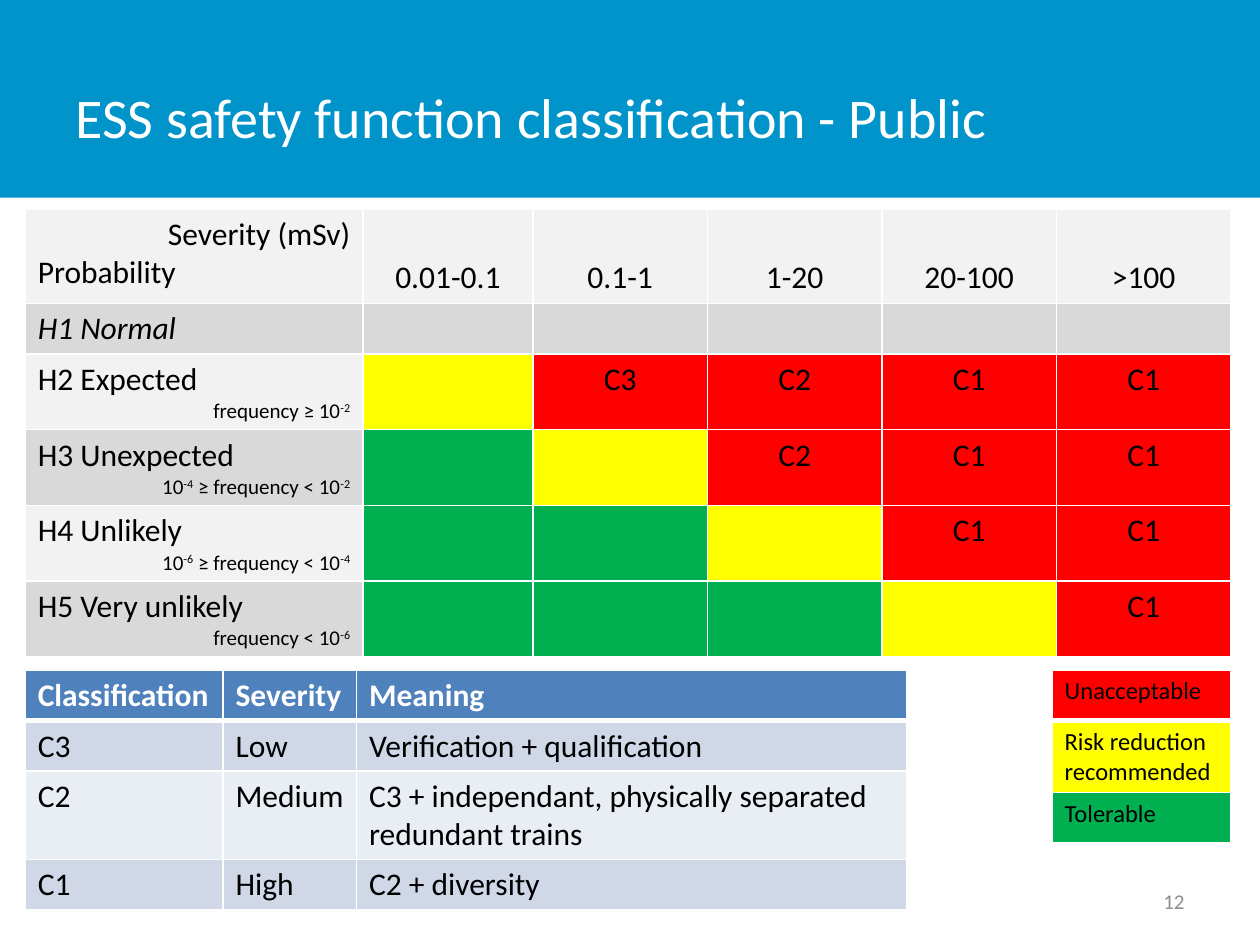
from lxml import etree
from pptx import Presentation
from pptx.dml.color import RGBColor
from pptx.enum import shapes, text
from pptx.oxml.ns import qn
from pptx.util import Inches, Pt

BLACK = RGBColor(0x00, 0x00, 0x00)
WHITE = RGBColor(0xFF, 0xFF, 0xFF)
GRAY = RGBColor(0x8C, 0x8C, 0x8C)
BAND_BLUE = RGBColor(0x00, 0x94, 0xCA)
HEADER_BLUE = RGBColor(0x4F, 0x81, 0xBD)
STRIPES_GRAY = [RGBColor(0xF2, 0xF2, 0xF2), RGBColor(0xD9, 0xD9, 0xD9)]
STRIPES_BLUE = [RGBColor(0xE9, 0xED, 0xF4), RGBColor(0xD0, 0xD8, 0xE8)]
RED = RGBColor(0xFF, 0x00, 0x00)
YELLOW = RGBColor(0xFF, 0xFF, 0x00)
GREEN = RGBColor(0x00, 0xB0, 0x50)
LEFT, CENTER, RIGHT = text.PP_ALIGN.LEFT, text.PP_ALIGN.CENTER, text.PP_ALIGN.RIGHT


def write(paragraph, content, size=18, color=BLACK, align=LEFT, bold=False, italic=False):
    """Fill a paragraph; every second part between ^ marks is superscript."""
    paragraph.alignment = align
    for index, part in enumerate(content.split("^")):
        if not part:
            continue
        run = paragraph.add_run()
        run.text = part
        run.font.name = "Calibri"
        run.font.size = Pt(size)
        run.font.color.rgb = color
        run.font.bold = bold
        run.font.italic = italic
        if index % 2:
            run.font._element.set("baseline", "30000")


def add_grid(left, top, widths, heights, fills, header_rule=1):
    """Add a table with white borders and one fill per cell."""
    grid = slide.shapes.add_table(len(heights), len(widths), Inches(left), Inches(top),
                                  Inches(sum(widths)), Inches(sum(heights))).table
    for column, width in zip(grid.columns, widths):
        column.width = Inches(width)
    for r, height in enumerate(heights):
        grid.rows[r].height = Inches(height)
        for c in range(len(widths)):
            cell = grid.cell(r, c)
            properties = cell._tc.get_or_add_tcPr()
            for side in "LRTB":
                at_header_rule = (r, side) in ((0, "B"), (1, "T"))
                width = header_rule if at_header_rule else 1
                border = etree.SubElement(properties, qn(f"a:ln{side}"), w=str(Pt(width)))
                line_fill = etree.SubElement(border, qn("a:solidFill"))
                etree.SubElement(line_fill, qn("a:srgbClr"), val=str(WHITE))
            cell.fill.solid()
            cell.fill.fore_color.rgb = fills[r][c]
    return grid


prs = Presentation()
prs.slide_width, prs.slide_height = Inches(10), Inches(7.5)
slide = prs.slides.add_slide(prs.slide_layouts[6])

band = slide.shapes.add_shape(shapes.MSO_SHAPE.RECTANGLE, 0, 0, Inches(10), Inches(1.57))
band.shadow.inherit = False
band.fill.solid()
band.fill.fore_color.rgb = BAND_BLUE
band.line.fill.background()

# Title and page number
for box, content, style in [
    ((0.5, 0.3, 7.81, 1.25), "ESS safety function classification - Public",
     dict(size=32, color=WHITE)),
    ((7.17, 6.95, 2.33, 0.4), "12", dict(size=12, color=GRAY, align=RIGHT)),
]:
    frame = slide.shapes.add_textbox(*map(Inches, box)).text_frame
    frame.word_wrap = True
    frame.vertical_anchor = text.MSO_ANCHOR.MIDDLE
    write(frame.paragraphs[0], content, **style)

# Risk matrix: yellow runs down the diagonal, red to its right, green to its left
severities = ["0.01-0.1", "0.1-1", "1-20", "20-100", ">100"]
probabilities = [
    ("H2 Expected", "frequency ≥ 10^-2", ["C3", "C2", "C1", "C1"]),
    ("H3 Unexpected", "10^-4^ ≥ frequency < 10^-2", ["C2", "C1", "C1"]),
    ("H4 Unlikely", "10^-6^ ≥ frequency < 10^-4", ["C1", "C1"]),
    ("H5 Very unlikely", "frequency < 10^-6", ["C1"]),
]
matrix_fills = [[stripe] * 6 for stripe in STRIPES_GRAY]
for i, (_, _, classes) in enumerate(probabilities):
    matrix_fills.append([STRIPES_GRAY[i % 2]] + [GREEN] * i + [YELLOW] + [RED] * len(classes))

matrix = add_grid(0.2, 1.66, [2.68, 1.35] + [1.385] * 4, [0.75, 0.4] + [0.6] * 4, matrix_fills)
corner = matrix.cell(0, 0).text_frame
write(corner.paragraphs[0], "Severity (mSv)", align=RIGHT)
write(corner.add_paragraph(), "Probability")
for c, severity in enumerate(severities, 1):
    heading = matrix.cell(0, c)
    heading.vertical_anchor = text.MSO_ANCHOR.BOTTOM
    write(heading.text_frame.paragraphs[0], severity, align=CENTER)
write(matrix.cell(1, 0).text_frame.paragraphs[0], "H1 Normal", italic=True)
for r, (name, frequency, classes) in enumerate(probabilities, 2):
    label = matrix.cell(r, 0).text_frame
    write(label.paragraphs[0], name)
    write(label.add_paragraph(), frequency, size=12, align=RIGHT)
    for c, safety_class in enumerate(classes, r):
        write(matrix.cell(r, c).text_frame.paragraphs[0], safety_class, align=CENTER)

# Colour legend
legend_entries = [("Unacceptable", RED), ("Risk reduction recommended", YELLOW),
                  ("Tolerable", GREEN)]
legend = add_grid(8.35, 5.32, [1.42], [0.4, 0.57, 0.4],
                  [[color] for _, color in legend_entries], header_rule=3)
for r, (meaning, _) in enumerate(legend_entries):
    write(legend.cell(r, 0).text_frame.paragraphs[0], meaning, size=14)

# Meaning of the classes
class_rows = [
    ("Classification", "Severity", "Meaning"),
    ("C3", "Low", "Verification + qualification"),
    ("C2", "Medium", "C3 + independant, physically separated redundant trains"),
    ("C1", "High", "C2 + diversity"),
]
class_fills = [[HEADER_BLUE] * 3] + [[STRIPES_BLUE[r % 2]] * 3 for r in range(1, 4)]
class_table = add_grid(0.2, 5.32, [1.57, 1.06, 4.37], [0.4, 0.4, 0.7, 0.4],
                       class_fills, header_rule=3)
for r, row in enumerate(class_rows):
    for c, content in enumerate(row):
        write(class_table.cell(r, c).text_frame.paragraphs[0], content,
              color=BLACK if r else WHITE, bold=r == 0)

prs.save("out.pptx")
